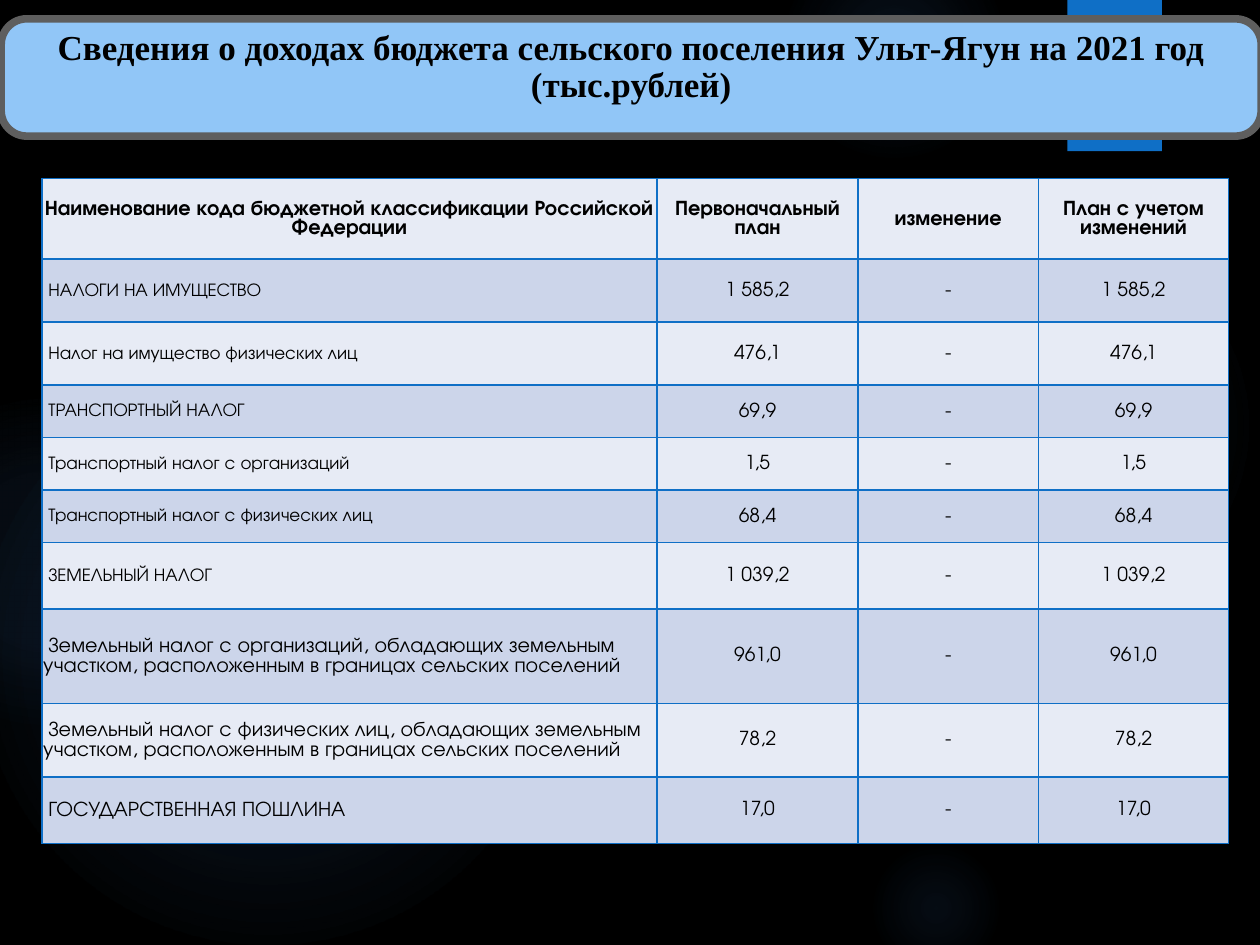
from lxml import etree
from pptx import Presentation
from pptx.dml.color import RGBColor
from pptx.enum.shapes import MSO_SHAPE
from pptx.enum.text import MSO_ANCHOR, PP_ALIGN
from pptx.oxml import parse_xml
from pptx.oxml.ns import nsdecls, qn
from pptx.util import Pt

OVAL, RECTANGLE, ROUNDED = MSO_SHAPE.OVAL, MSO_SHAPE.RECTANGLE, MSO_SHAPE.ROUNDED_RECTANGLE
LEFT, CENTER = PP_ALIGN.LEFT, PP_ALIGN.CENTER
MIDDLE, TOP = MSO_ANCHOR.MIDDLE, MSO_ANCHOR.TOP

BLACK = RGBColor(0x00, 0x00, 0x00)
BLUE = RGBColor(0x0F, 0x6F, 0xC6)
GLOW = RGBColor(0x44, 0x8A, 0xD7)
SKY = RGBColor(0x91, 0xC6, 0xF7)
GRAY = RGBColor(0x5E, 0x5E, 0x5E)
PALE = RGBColor(0xE7, 0xEB, 0xF5)
LAVENDER = RGBColor(0xCC, 0xD5, 0xEA)

TABLE_FONT = "TeX Gyre Adventor"
TITLE = "Сведения о доходах бюджета сельского поселения Ульт-Ягун на 2021 год (тыс.рублей)"
TITLE_FORMAT = {"name": "Times New Roman", "size": Pt(20), "bold": True}
HEADER_FORMAT = {"name": TABLE_FONT, "size": Pt(12), "bold": True}
VALUE_FORMAT = {"name": TABLE_FONT, "size": Pt(11), "bold": False}

GLOWS = [
    (496, 132, 222, ((0, 7), (36, 6), (69, 0))),
    (448, -36, 126, ((0, 14), (36, 7), (73, 0))),
    (496, 480, 78, ((0, 9), (36, 5), (66, 0))),
    (-12, 210, 330, ((0, 11), (36, 10), (75, 0))),
    (-66, 228, 186, ((0, 8), (36, 8), (72, 0))),
]

COLUMN_WIDTHS = [351.4, 115, 103, 108.8]
HEADER_HEIGHT = 46
HEADERS = [
    "Наименование кода бюджетной классификации Российской Федерации",
    "Первоначальный план",
    "изменение",
    "План с учетом изменений",
]
INCOMES = [
    ("НАЛОГИ НА ИМУЩЕСТВО", "1 585,2", 10.5, 36),
    ("Налог на имущество физических лиц", "476,1", 10.5, 36),
    ("ТРАНСПОРТНЫЙ НАЛОГ", "69,9", 10.5, 30),
    ("Транспортный налог с организаций", "1,5", 10.5, 30),
    ("Транспортный налог с физических лиц", "68,4", 10.5, 30),
    ("ЗЕМЕЛЬНЫЙ НАЛОГ", "1 039,2", 10.5, 38),
    ("Земельный налог с организаций, обладающих земельным участком, "
     "расположенным в границах сельских поселений", "961,0", 12, 54),
    ("Земельный налог с физических лиц, обладающих земельным участком, "
     "расположенным в границах сельских поселений", "78,2", 12, 42),
    ("ГОСУДАРСТВЕННАЯ ПОШЛИНА", "17,0", 12, 38),
]


def apply_format(target, values):
    for name, value in values.items():
        setattr(target, name, value)


def write_text(text_frame, text, font_format, alignment):
    paragraph = text_frame.paragraphs[0]
    paragraph.alignment = alignment
    run = paragraph.add_run()
    run.text = text
    apply_format(run.font, font_format)
    run.font.color.rgb = BLACK
    return paragraph


def add_plain_shape(slide, kind, left, top, width, height, color):
    shape = slide.shapes.add_shape(kind, Pt(left), Pt(top), Pt(width), Pt(height))
    shape.shadow.inherit = False
    shape.fill.solid()
    shape.fill.fore_color.rgb = color
    shape.line.fill.background()
    return shape


def add_glow(slide, left, top, diameter, stops):
    shape = add_plain_shape(slide, OVAL, left, top, diameter, diameter, GLOW)
    stop_xml = "".join(
        f'<a:gs pos="{position * 1000}"><a:srgbClr val="{GLOW}">'
        f'<a:alpha val="{opacity * 1000}"/></a:srgbClr></a:gs>'
        for position, opacity in stops
    )
    gradient = parse_xml(
        f'<a:gradFill {nsdecls("a")}><a:gsLst>{stop_xml}</a:gsLst><a:path path="circle">'
        '<a:fillToRect l="50000" t="50000" r="50000" b="50000"/></a:path></a:gradFill>'
    )
    properties = shape.element.spPr
    properties.replace(properties.find(qn("a:solidFill")), gradient)


def add_title(slide):
    shape = add_plain_shape(slide, ROUNDED, 0.7, 10.8, 720, 67, SKY)
    shape.adjustments[0] = 0.217
    shape.line.color.rgb = GRAY
    shape.line.width = Pt(4.33)
    text_frame = shape.text_frame
    apply_format(text_frame, {"word_wrap": True, "vertical_anchor": TOP, "margin_top": Pt(2)})
    write_text(text_frame, TITLE, TITLE_FORMAT, CENTER).line_spacing = 0.9


def set_borders(cell):
    properties = cell._tc.get_or_add_tcPr()
    for position, side in enumerate(("lnL", "lnR", "lnT", "lnB")):
        border = etree.Element(qn(f"a:{side}"), w=str(Pt(1)))
        fill = etree.SubElement(border, qn("a:solidFill"))
        etree.SubElement(fill, qn("a:srgbClr"), val=str(BLUE))
        properties.insert(position, border)


def fill_cell(cell, text, font_format, alignment, color):
    apply_format(cell, {
        "margin_left": Pt(0.7), "margin_right": Pt(0.7),
        "margin_top": Pt(0.7), "margin_bottom": Pt(0), "vertical_anchor": MIDDLE,
    })
    cell.fill.solid()
    cell.fill.fore_color.rgb = color
    set_borders(cell)
    return write_text(cell.text_frame, text, font_format, alignment)


def add_income_table(slide):
    heights = [HEADER_HEIGHT] + [income[-1] for income in INCOMES]
    table = slide.shapes.add_table(
        len(heights), len(COLUMN_WIDTHS), Pt(24), Pt(102),
        Pt(sum(COLUMN_WIDTHS)), Pt(sum(heights)),
    ).table
    for column, width in zip(table.columns, COLUMN_WIDTHS):
        column.width = Pt(width)
    for row, height in zip(table.rows, heights):
        row.height = Pt(height)
    for column, header in enumerate(HEADERS):
        fill_cell(table.cell(0, column), header, HEADER_FORMAT, CENTER, PALE)
    for row, (label, amount, size, _) in enumerate(INCOMES, 1):
        color = LAVENDER if row % 2 else PALE
        label_format = {**VALUE_FORMAT, "size": Pt(size)}
        paragraph = fill_cell(table.cell(row, 0), label, label_format, LEFT, color)
        paragraph._p.get_or_add_pPr().set("indent", str(Pt(3)))
        for column, value in enumerate((amount, "-", amount), 1):
            fill_cell(table.cell(row, column), value, VALUE_FORMAT, CENTER, color)


def main():
    presentation = Presentation()
    presentation.slide_width, presentation.slide_height = Pt(720), Pt(540)
    slide = presentation.slides.add_slide(presentation.slide_layouts[6])
    slide.background.fill.solid()
    slide.background.fill.fore_color.rgb = BLACK
    for glow in GLOWS:
        add_glow(slide, *glow)
    add_plain_shape(slide, RECTANGLE, 610, 0, 54, 86.4, BLUE)
    add_title(slide)
    add_income_table(slide)
    presentation.save("out.pptx")


if __name__ == "__main__":
    main()
